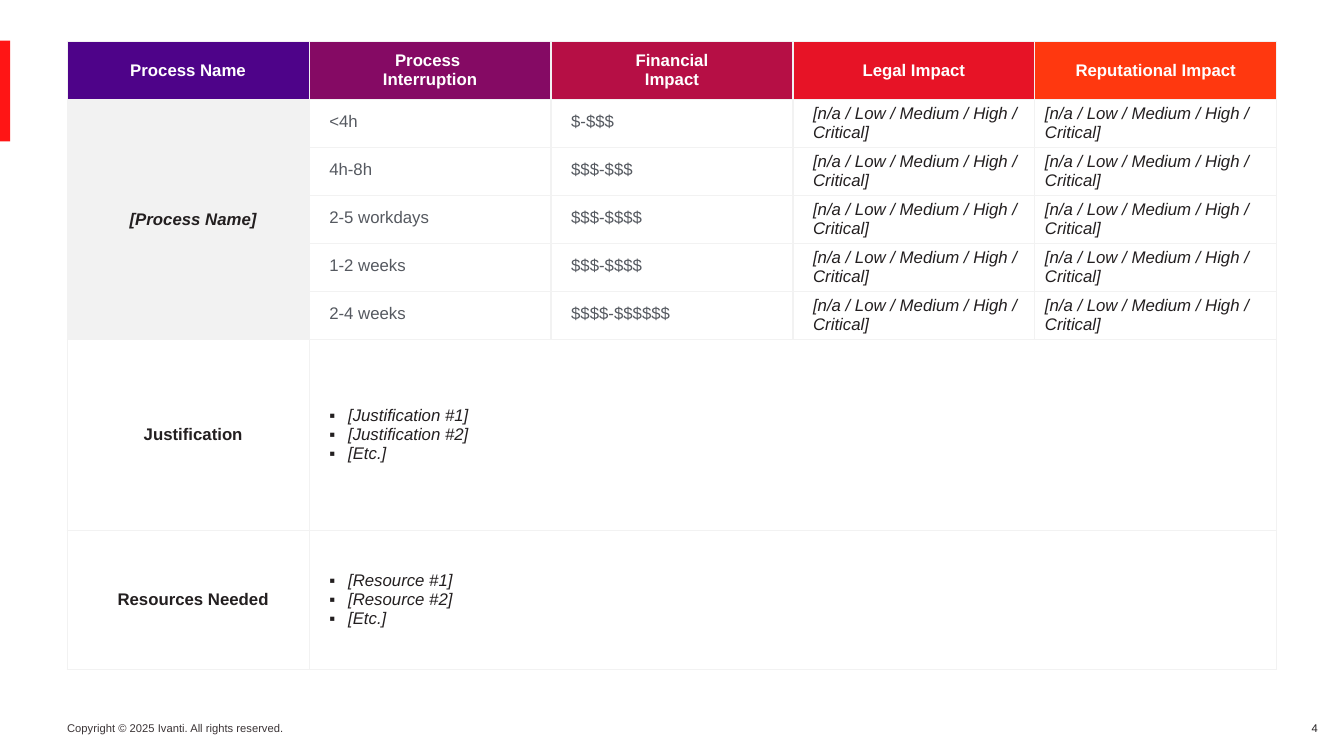
from lxml import etree
from pptx import Presentation
from pptx.dml.color import RGBColor
from pptx.enum import shapes, text
from pptx.oxml import ns
from pptx.util import Pt

COLORS = {"ink": "231F20", "grey": "555960", "copyright": "3B3436", "white": "FFFFFF",
          "border": "F2F2F2", "accent": "FF1515"}
HEADERS = [("Process Name", "4E0389"), ("Process \nInterruption", "850A64"),
           ("Financial\nImpact", "B60F45"), ("Legal Impact", "E71326"),
           ("Reputational Impact", "FF380F")]
INTERRUPTIONS = [("<4h", "$-$$$"), ("4h-8h", "$$$-$$$"), ("2-5 workdays", "$$$-$$$$"),
                 ("1-2 weeks", "$$$-$$$$"), ("2-4 weeks", "$$$$-$$$$$$")]
RATING = "[n/a / Low / Medium / High / Critical]"
DETAILS = [("Justification", ["[Justification #1]", "[Justification #2]", "[Etc.]"]),
           ("Resources Needed", ["[Resource #1]", "[Resource #2]", "[Etc.]"])]
CENTER = text.PP_ALIGN.CENTER


def write(paragraph, wording, color, size=12, bold=False, italic=False, align=None):
    paragraph.alignment = align
    for number, line in enumerate(wording.split("\n")):
        if number:
            paragraph.add_line_break()
        run = paragraph.add_run()
        run.text = line
        run.font.name = "Arial"
        run.font.size = Pt(size)
        run.font.bold = bold
        run.font.italic = italic
        run.font.color.rgb = RGBColor.from_string(color)


def prepare(cell, fill, left=0.0):
    """Give a cell its borders, fill and insets, and return its first paragraph."""
    properties = cell._tc.get_or_add_tcPr()
    for side in ("lnL", "lnR", "lnT", "lnB"):
        line = etree.SubElement(properties, ns.qn(f"a:{side}"), w=str(Pt(1)))
        solid = etree.SubElement(line, ns.qn("a:solidFill"))
        etree.SubElement(solid, ns.qn("a:srgbClr"), val=COLORS["border"])
    cell.fill.solid()
    cell.fill.fore_color.rgb = RGBColor.from_string(fill)
    cell.margin_left = Pt(left)
    cell.margin_right = cell.margin_top = cell.margin_bottom = 0
    cell.vertical_anchor = text.MSO_ANCHOR.MIDDLE
    return cell.text_frame.paragraphs[0]


deck = Presentation()
deck.slide_width, deck.slide_height = Pt(960), Pt(540)
slide = deck.slides.add_slide(deck.slide_layouts[6])

accent = slide.shapes.add_shape(shapes.MSO_SHAPE.RECTANGLE, 0, Pt(29), Pt(7.2), Pt(72))
accent.shadow.inherit = False
accent.fill.solid()
accent.fill.fore_color.rgb = RGBColor.from_string(COLORS["accent"])
accent.line.fill.background()

for left, width, wording, color, align in [
    (48, 164, "Copyright © 2025 Ivanti. All rights reserved.", "copyright", text.PP_ALIGN.LEFT),
    (914, 34.5, "4", "ink", text.PP_ALIGN.RIGHT),
]:
    footer = slide.shapes.add_textbox(Pt(left), Pt(512), Pt(width), Pt(17)).text_frame
    footer.word_wrap = align == text.PP_ALIGN.RIGHT
    footer.margin_left = 0
    footer.margin_right = Pt(7.2)
    footer.margin_top = footer.margin_bottom = Pt(3.6)
    write(footer.paragraphs[0], wording, COLORS[color], size=8, align=align)

heights = [41.4] + [34.3] * len(INTERRUPTIONS) + [136.4, 99.3]
impact = slide.shapes.add_table(len(heights), len(HEADERS), Pt(48), Pt(29.5),
                                Pt(864), Pt(sum(heights))).table
impact.first_row = impact.horz_banding = False
for column in impact.columns:
    column.width = Pt(172.8)
for row, height in zip(impact.rows, heights):
    row.height = Pt(height)

for column, (heading, fill) in enumerate(HEADERS):
    paragraph = prepare(impact.cell(0, column), fill)
    paragraph.space_after = Pt(6.8 if column else 0)
    write(paragraph, heading, COLORS["white"], bold=True, align=CENTER)

for row, estimates in enumerate(INTERRUPTIONS, start=1):
    name = prepare(impact.cell(row, 0), COLORS["border"], 7.2)
    if row == 1:
        write(name, "[Process Name]", COLORS["ink"], bold=True, italic=True, align=CENTER)
    for column, estimate in enumerate(estimates, start=1):
        paragraph = prepare(impact.cell(row, column), COLORS["white"], 14.4)
        paragraph.line_spacing = Pt(11.2)
        paragraph.space_after = Pt(6.8)
        write(paragraph, estimate, COLORS["grey"])
    for column, inset in ((3, 14.4), (4, 7.2)):
        paragraph = prepare(impact.cell(row, column), COLORS["white"], inset)
        write(paragraph, RATING, COLORS["ink"], italic=True)
impact.cell(1, 0).merge(impact.cell(len(INTERRUPTIONS), 0))

for row, (topic, points) in enumerate(DETAILS, start=len(INTERRUPTIONS) + 1):
    label = prepare(impact.cell(row, 0), COLORS["white"], 7.2)
    write(label, topic, COLORS["ink"], bold=True, align=CENTER)
    for column in range(1, len(HEADERS)):
        prepare(impact.cell(row, column), COLORS["white"], 14.4)
    detail = impact.cell(row, 1)
    detail.merge(impact.cell(row, len(HEADERS) - 1))
    for number, point in enumerate(points):
        frame = detail.text_frame
        paragraph = frame.add_paragraph() if number else frame.paragraphs[0]
        bulleted = paragraph._p.get_or_add_pPr()
        bulleted.set("marL", str(Pt(13.5)))
        bulleted.set("indent", str(-Pt(13.5)))
        etree.SubElement(bulleted, ns.qn("a:buFont"), typeface="Arial")
        etree.SubElement(bulleted, ns.qn("a:buChar"), char="▪")
        write(paragraph, point, COLORS["ink"], italic=True)

deck.save("out.pptx")
